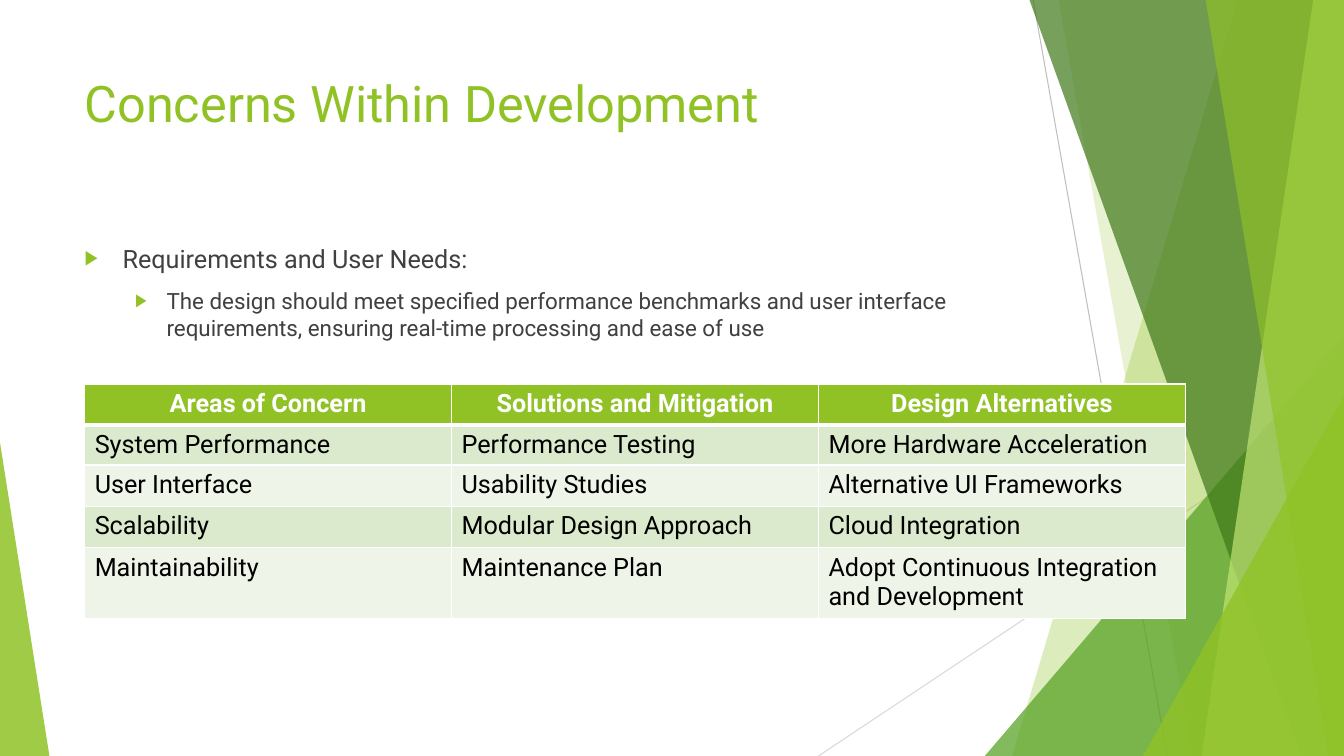
from pptx import Presentation
from pptx.dml.color import RGBColor
from pptx.enum.shapes import MSO_CONNECTOR as Connector, MSO_SHAPE as Preset
from pptx.enum.text import MSO_ANCHOR as Anchor, MSO_AUTO_SIZE as AutoSize, PP_ALIGN as Align
from pptx.oxml import parse_xml
from pptx.oxml.ns import nsdecls, qn
from pptx.util import Pt

PAGE_WIDTH, PAGE_HEIGHT = 960, 540
FACET_TOP = -0.72
FONT = "Roboto"
GREEN, GREY, WHITE, BLACK = "90C226", "404040", "FFFFFF", "000000"
BANDS = ["DBE9CD", "EEF4E8"]

# Straight rules: start x, start y, end x, end y, colour
RULES = [
    (738, 0, 833.76, 540, "BFBFBF"),
    (960, 290.16, 584.64, 540, "D9D9D9"),
]
# Facets reach the right edge: top x, bottom x, colour, opacity in percent
FACETS_BEHIND = [(884.16, 722.88, GREEN, 30), (756, 851.76, GREEN, 20)]
FACETS_FRONT = [
    (735.12, 929.52, "3F7819", 70),
    (938.16, 858.24, "C0E474", 70),
    (861.12, 948.96, GREEN, 65),
]
# Triangles stand on the bottom edge: left, top, width, apex, colour, opacity
TRIANGLE_BEHIND = (703.44, 239.76, 256.56, 1, "54A021", 72)
TRIANGLES_FRONT = [
    (816.48, 282.96, 143.52, 1, GREEN, 80),
    (0, 316.08, 35.28, 0, GREEN, 85),
]

# Body lines: text, level, size, left margin, hanging indent
BODY_LINES = [
    ("Requirements and User Needs:", 0, 18, 27, 27),
    ("The design should meet specified performance benchmarks and user interface "
     "requirements, ensuring real-time processing and ease of use", 1, 16, 58.5, 22.5),
]

CONCERNS = [
    ["Areas of Concern", "Solutions and Mitigation", "Design Alternatives"],
    ["System Performance", "Performance Testing", "More Hardware Acceleration"],
    ["User Interface", "Usability Studies", "Alternative UI Frameworks"],
    ["Scalability", "Modular Design Approach", "Cloud Integration"],
    ["Maintainability", "Maintenance Plan", "Adopt Continuous Integration and Development"],
]
ROW_HEIGHTS = [29.52, 28.08, 29.52, 29.52, 50.4]
COLUMN_WIDTH = 262.08


def color(value):
    return RGBColor.from_string(value)


def paint(shape, fill, opacity):
    shape.shadow.inherit = False
    shape.line.fill.background()
    shape.fill.solid()
    shape.fill.fore_color.rgb = color(fill)
    tint = shape.element.spPr.find(".//" + qn("a:srgbClr"))
    tint.append(parse_xml(f'<a:alpha {nsdecls("a")} val="{opacity * 1000}"/>'))


def add_rule(page, x1, y1, x2, y2, stroke):
    rule = page.shapes.add_connector(Connector.STRAIGHT, Pt(x1), Pt(y1), Pt(x2), Pt(y2))
    rule.line.color.rgb = color(stroke)
    rule.line.width = Pt(0.75)
    rule.element.spPr.append(parse_xml(f'<a:effectLst {nsdecls("a")}/>'))


def add_facet(page, top_x, bottom_x, fill, opacity):
    corners = [(PAGE_WIDTH, FACET_TOP), (PAGE_WIDTH, PAGE_HEIGHT), (bottom_x, PAGE_HEIGHT)]
    outline = page.shapes.build_freeform(Pt(top_x), Pt(FACET_TOP))
    outline.add_line_segments([(Pt(x), Pt(y)) for x, y in corners], close=True)
    paint(outline.convert_to_shape(), fill, opacity)


def add_triangle(page, left, top, width, apex, fill, opacity):
    triangle = page.shapes.add_shape(
        Preset.ISOSCELES_TRIANGLE, Pt(left), Pt(top), Pt(width), Pt(PAGE_HEIGHT - top))
    triangle.adjustments[0] = apex
    paint(triangle, fill, opacity)


def format_runs(para, size, ink, bold=False):
    for span in para.runs:
        span.font.name = FONT
        span.font.size = Pt(size)
        span.font.bold = bold
        span.font.color.rgb = color(ink)


def place(box, left, top, width, height):
    box.left, box.top, box.width, box.height = Pt(left), Pt(top), Pt(width), Pt(height)
    box.text_frame.word_wrap = True
    box.text_frame.auto_size = AutoSize.NONE
    box.text_frame.vertical_anchor = Anchor.TOP
    # Bring the placeholder in front of the decoration
    box.element.getparent().append(box.element)


def set_bullet(para, margin, hanging):
    properties = para._p.get_or_add_pPr()
    properties.set("marL", str(Pt(margin)))
    properties.set("indent", str(-Pt(hanging)))
    for tag in (f'<a:buClr {nsdecls("a")}><a:srgbClr val="{GREEN}"/></a:buClr>',
                f'<a:buSzPct {nsdecls("a")} val="80000"/>',
                f'<a:buChar {nsdecls("a")} char="▶"/>'):
        properties.append(parse_xml(tag))


def fill_title(title):
    place(title, 53.28, 48.24, 676.8, 103.68)
    title.text_frame.text = "Concerns Within Development"
    para = title.text_frame.paragraphs[0]
    para.alignment = Align.LEFT
    format_runs(para, 36, GREEN)


def fill_body(body):
    place(body, 53.28, 169.92, 676.8, 305.28)
    body.text_frame.text = "\n".join(line[0] for line in BODY_LINES)
    for para, (_, level, size, margin, hanging) in zip(body.text_frame.paragraphs, BODY_LINES):
        para.level = level
        para.space_before = Pt(10)
        set_bullet(para, margin, hanging)
        format_runs(para, size, GREY)


def set_borders(cell, widths):
    properties = cell._tc.get_or_add_tcPr()
    for side, width in widths.items():
        properties.append(parse_xml(
            f'<a:ln{side} {nsdecls("a")} w="{Pt(width)}"><a:solidFill>'
            f'<a:srgbClr val="{WHITE}"/></a:solidFill></a:ln{side}>'))


def fill_cell(cell, text, row):
    header = row == 0
    set_borders(cell, {"L": 1, "R": 1, "T": 3 if row == 1 else 1, "B": 3 if header else 1})
    cell.fill.solid()
    cell.fill.fore_color.rgb = color(GREEN if header else BANDS[(row - 1) % 2])
    cell.text_frame.text = text
    para = cell.text_frame.paragraphs[0]
    para.alignment = Align.CENTER if header else Align.LEFT
    format_runs(para, 18, WHITE if header else BLACK, bold=header)


def add_concerns_table(page):
    columns = len(CONCERNS[0])
    table = page.shapes.add_table(
        len(CONCERNS), columns, Pt(60.48), Pt(274.32),
        Pt(COLUMN_WIDTH * columns), Pt(sum(ROW_HEIGHTS))).table
    for column in table.columns:
        column.width = Pt(COLUMN_WIDTH)
    for row, texts in enumerate(CONCERNS):
        table.rows[row].height = Pt(ROW_HEIGHTS[row])
        for column, text in enumerate(texts):
            fill_cell(table.cell(row, column), text, row)


def main():
    deck = Presentation()
    deck.slide_width, deck.slide_height = Pt(PAGE_WIDTH), Pt(PAGE_HEIGHT)
    page = deck.slides.add_slide(deck.slide_layouts[1])

    # Decoration, back to front
    for rule in RULES:
        add_rule(page, *rule)
    for facet in FACETS_BEHIND:
        add_facet(page, *facet)
    add_triangle(page, *TRIANGLE_BEHIND)
    for facet in FACETS_FRONT:
        add_facet(page, *facet)
    for triangle in TRIANGLES_FRONT:
        add_triangle(page, *triangle)

    # Content
    fill_title(page.shapes.title)
    fill_body(page.placeholders[1])
    add_concerns_table(page)
    deck.save("out.pptx")


if __name__ == "__main__":
    main()
